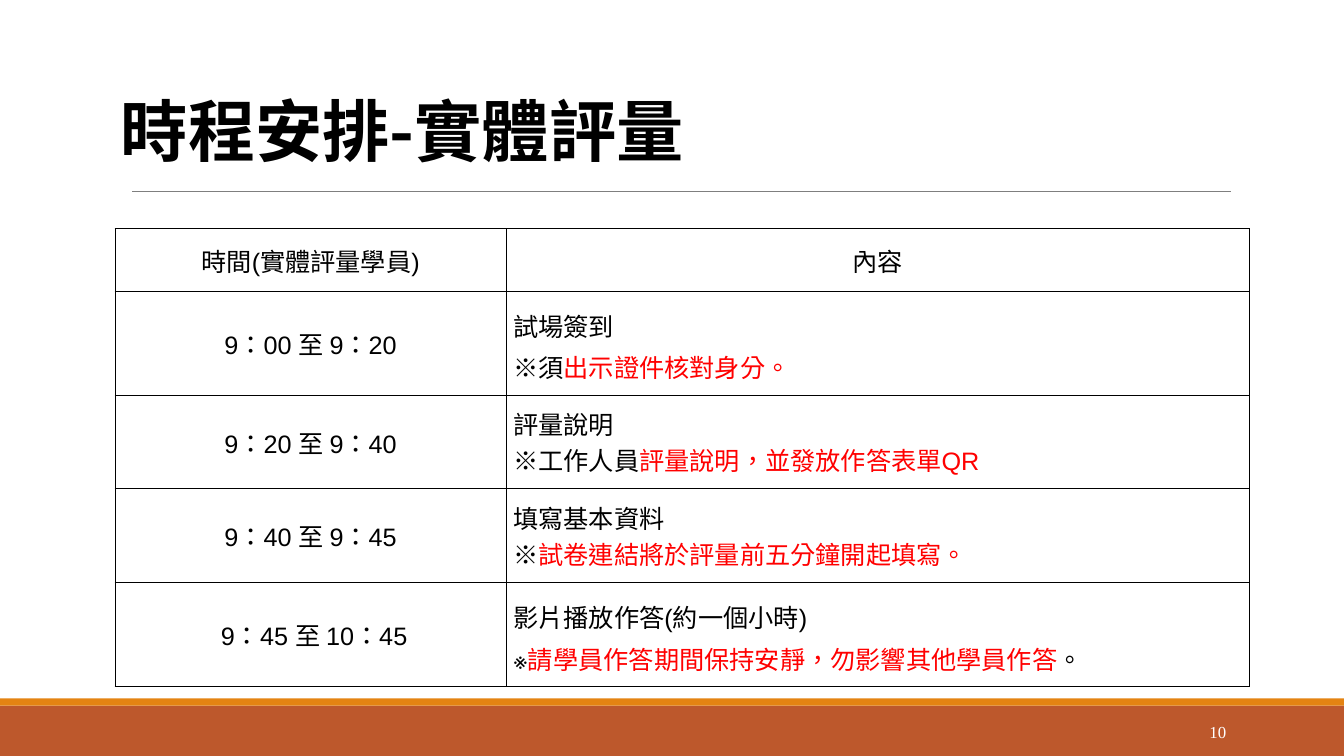
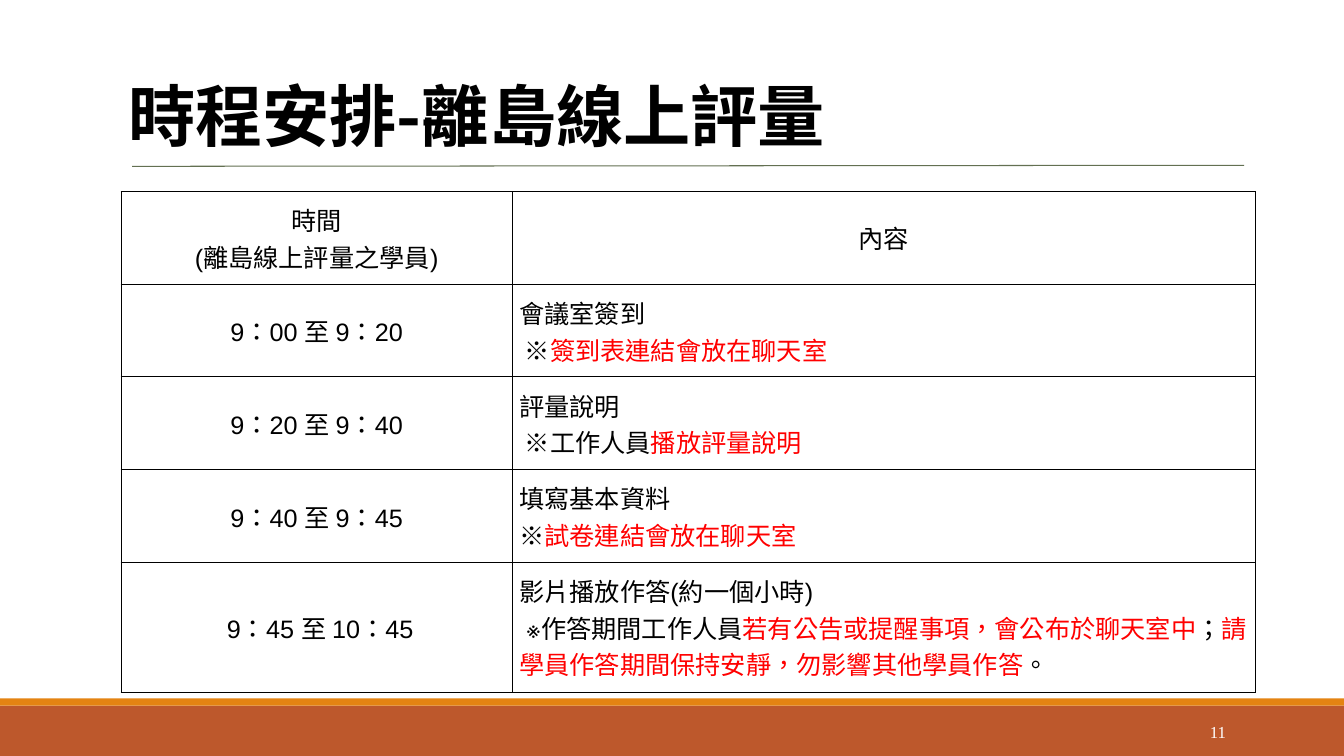
"""Build two timetable slides for on-site and outlying-island online assessment."""
import pptx
import pptx.dml.color
import pptx.enum.shapes
import pptx.enum.text
import pptx.oxml
import pptx.oxml.ns
import pptx.util
from pptx.util import Inches

COLORS = {
    "band": "BD582C", "stripe": "E48312", "rule": "7F7F7F", "olive": "637052",
    "ink": "000000", "red": "FF0000", "white": "FFFFFF",
}
ALIGN = pptx.enum.text.PP_ALIGN
ANCHOR = pptx.enum.text.MSO_ANCHOR
CJK_FONT = "Noto Sans CJK SC"
COLUMN_WIDTHS = [3.88, 7.37]
TITLE = {"size": pptx.util.Pt(48), "name": CJK_FONT, "bold": True}
BODY = {"size": pptx.util.Pt(18), "name": "Arial"}
NUMBER = {"size": pptx.util.Pt(12), "name": "Times New Roman"}
SPACED = {"space_before": pptx.util.Pt(12), "space_after": pptx.util.Pt(12)}
LOOSE = {"line_spacing": 1.15, **SPACED}
TIMES = ["9：00 至 9：20", "9：20 至 9：40", "9：40 至 9：45", " 9：45 至 10：45"]

PAGES = [
    {
        "title": "時程安排-實體評量", "title_at": (1.1, 0.94, 11, 0.8), "number": "10",
        "rule": (1.31, 1.9, 12.21, 1.9), "rule_color": "rule",
        "table_at": (1.14, 2.27), "row_heights": [0.62, 1.03, 0.93, 0.93, 1.03],
        "heads": [["時間(實體評量學員)"], ["內容"]],
        "details": [
            (["試場簽到\n※須*出示證件核對身分。"], LOOSE),
            (["評量說明\n※工作人員*評量說明，並發放作答表單QR"], SPACED),
            (["填寫基本資料", "※*試卷連結將於評量前五分鐘開起填寫。"], {}),
            (["影片播放作答(約一個小時)\n※*請學員作答期間保持安靜，勿影響其他學員作答*。"], LOOSE),
        ],
    },
    {
        "title": "時程安排-離島線上評量", "title_at": (1.17, 0.71, 11, 0.88), "number": "11",
        "rule": (1.31, 1.65, 12.34, 1.64), "rule_color": "olive",
        "table_at": (1.2, 1.9), "row_heights": [0.92, 0.92, 0.92, 0.92, 1.29],
        "heads": [["時間", "(離島線上評量之學員)"], ["內容"]],
        "details": [
            (["會議室簽到\n ※*簽到表連結會放在聊天室"], {}),
            (["評量說明\n ※工作人員*播放評量說明"], {}),
            (["填寫基本資料", "※*試卷連結會放在聊天室"], {}),
            (["影片播放作答(約一個小時)\n ※作答期間工作人員"
              "*若有公告或提醒事項，會公布於聊天室中*；"
              "*請學員作答期間保持安靜，勿影響其他學員作答*。"], {}),
        ],
    },
]


def rgb(name):
    """Return the named palette colour."""
    return pptx.dml.color.RGBColor.from_string(COLORS[name])


def write(frame, lines, font_format, para_format, color="ink"):
    """Write one paragraph per line; asterisks switch between the colour and red."""
    for index, line in enumerate(lines):
        para = frame.paragraphs[0] if index == 0 else frame.add_paragraph()
        for key, value in para_format.items():
            setattr(para, key, value)
        for part, text in enumerate(line.split("*")):
            for row, piece in enumerate(text.split("\n")):
                if row:
                    para.add_line_break()
                span = para.add_run()
                span.text = piece
                for key, value in font_format.items():
                    setattr(span.font, key, value)
                span.font.color.rgb = rgb("red" if part % 2 else color)
                properties = span.font._element
                properties.set("lang", "zh-TW")
                east_asian = pptx.oxml.ns.qn("a:ea")
                properties.makeelement(east_asian)
                latin = properties.find(pptx.oxml.ns.qn("a:latin"))
                latin.addnext(properties.makeelement(east_asian, {"typeface": CJK_FONT}))


deck = pptx.Presentation()
deck.slide_width, deck.slide_height = Inches(13.33), Inches(7.5)

for content in PAGES:
    page = deck.slides.add_slide(deck.slide_layouts[5])

    for color, top, height in [("band", 7, 0.5), ("stripe", 6.93, 0.07)]:
        band = page.shapes.add_shape(
            pptx.enum.shapes.MSO_SHAPE.RECTANGLE,
            0, Inches(top), deck.slide_width, Inches(height))
        band.shadow.inherit = False
        band.fill.solid()
        band.fill.fore_color.rgb = rgb(color)
        band.line.fill.background()

    rule = page.shapes.add_connector(
        pptx.enum.shapes.MSO_CONNECTOR.STRAIGHT, *map(Inches, content["rule"]))
    rule.line.color.rgb = rgb(content["rule_color"])
    rule.line.width = pptx.util.Pt(0.75)
    rule._element.spPr.append(pptx.oxml.parse_xml(
        f'<a:effectLst {pptx.oxml.ns.nsdecls("a")}/>'))

    title = page.shapes.title
    title.left, title.top, title.width, title.height = map(Inches, content["title_at"])
    title.text_frame.auto_size = pptx.enum.text.MSO_AUTO_SIZE.NONE
    title.text_frame.vertical_anchor = ANCHOR.BOTTOM
    write(title.text_frame, [content["title"]], TITLE,
          {"alignment": ALIGN.LEFT, "line_spacing": 0.85})

    number = page.shapes.add_textbox(*map(Inches, (10.83, 7.06, 1.43, 0.4)))
    number.text_frame.word_wrap = True
    number.text_frame.vertical_anchor = ANCHOR.MIDDLE
    write(number.text_frame, [content["number"]], NUMBER, {"alignment": ALIGN.RIGHT}, "white")

    heights = content["row_heights"]
    table = page.shapes.add_table(
        len(heights), len(COLUMN_WIDTHS), *map(Inches, content["table_at"]),
        Inches(sum(COLUMN_WIDTHS)), Inches(sum(heights))).table
    table.first_row = table.horz_banding = False
    for column, width in zip(table.columns, COLUMN_WIDTHS):
        column.width = Inches(width)
    for row, height in zip(table.rows, heights):
        row.height = Inches(height)

    centred = {"alignment": ALIGN.CENTER}
    rows = [[(head, centred) for head in content["heads"]]]
    for time, (lines, spacing) in zip(TIMES, content["details"]):
        rows.append([([time], centred), (lines, {"alignment": ALIGN.LEFT, **spacing})])

    for row_index, row in enumerate(rows):
        for column_index, (lines, para_format) in enumerate(row):
            cell = table.cell(row_index, column_index)
            is_detail = row_index > 0 and column_index == 1
            cell.vertical_anchor = ANCHOR.TOP if is_detail else ANCHOR.MIDDLE
            cell.margin_left = cell.margin_right = Inches(0.07 if is_detail else 0.1)
            cell.margin_top = cell.margin_bottom = Inches(0.1)
            cell.fill.solid()
            cell.fill.fore_color.rgb = rgb("white")
            for position, side in enumerate(["lnL", "lnR", "lnT", "lnB"]):
                cell._tc.tcPr.insert(position, pptx.oxml.parse_xml(
                    f'<a:{side} {pptx.oxml.ns.nsdecls("a")} w="{pptx.util.Pt(0.75)}">'
                    f'<a:solidFill><a:srgbClr val="{COLORS["ink"]}"/></a:solidFill></a:{side}>'))
            write(cell.text_frame, lines, BODY, para_format)

deck.save("out.pptx")
